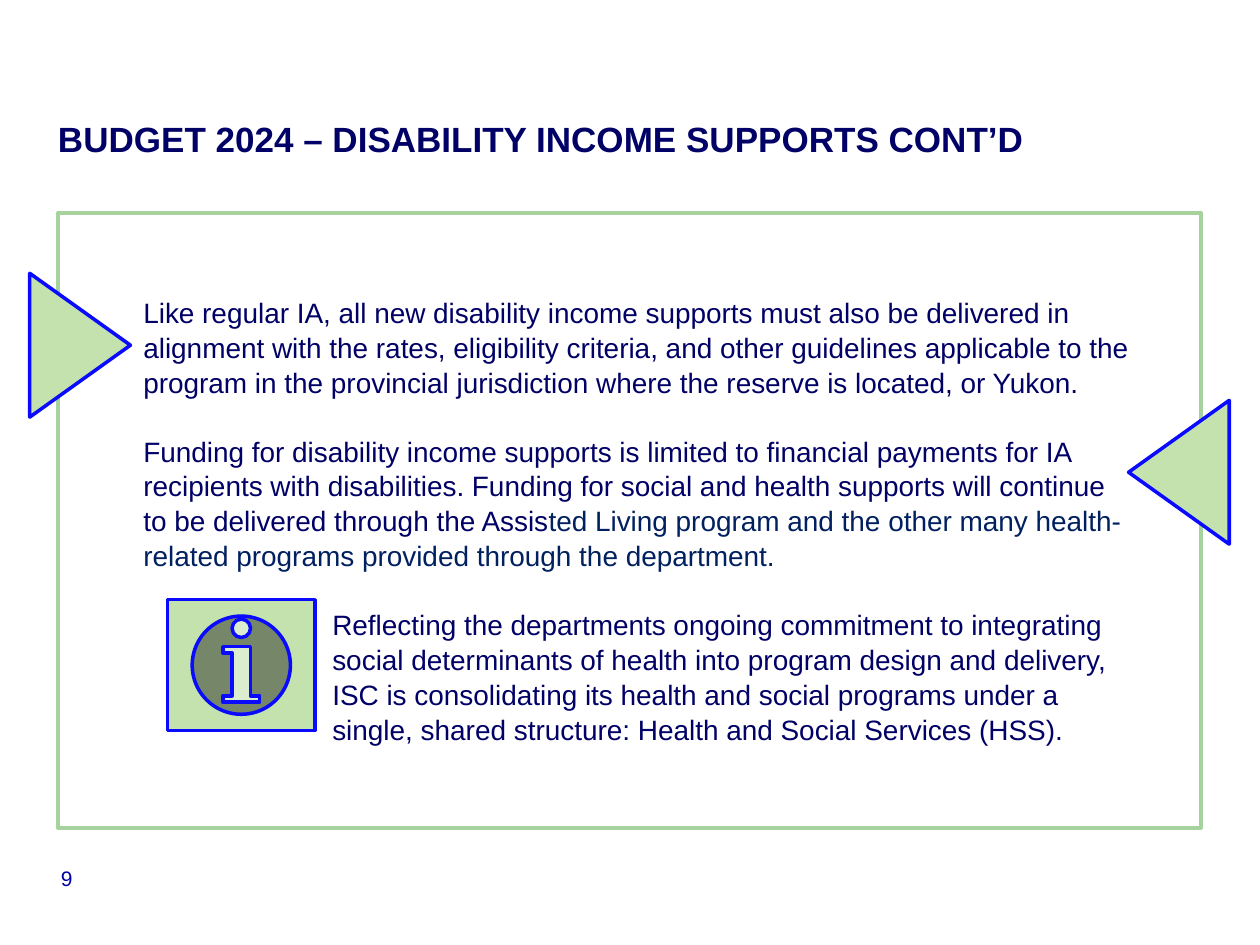
from dataclasses import dataclass

from lxml import etree
from pptx import Presentation
from pptx.dml.color import RGBColor
from pptx.enum.shapes import MSO_SHAPE
from pptx.enum.text import MSO_ANCHOR, PP_ALIGN
from pptx.oxml.ns import qn
from pptx.util import Cm, Pt

RECTANGLE = MSO_SHAPE.RECTANGLE
PENTAGON = MSO_SHAPE.PENTAGON
INFORMATION = MSO_SHAPE.ACTION_BUTTON_INFORMATION
TOP = MSO_ANCHOR.TOP
LEFT, CENTER = PP_ALIGN.LEFT, PP_ALIGN.CENTER


@dataclass(frozen=True)
class Theme:
    font: str = "Arial"
    navy: str = "000066"
    dark_blue: str = "002060"
    number_blue: str = "0000A3"
    outline_blue: str = "0A0AFF"
    pale_green: str = "C4E2AE"
    frame_green: str = "A6D39D"
    title_size: int = 20
    body_size: int = 16
    number_size: int = 12
    line_width: int = 2


THEME = Theme()

RULES_TEXT = (
    "Like regular IA, all new disability income supports must also be delivered in "
    "alignment with the rates, eligibility criteria, and other guidelines applicable "
    "to the program in the provincial jurisdiction where the reserve is located, or Yukon."
)
FUNDING_TEXT = (
    "Funding for disability income supports is limited to financial payments for IA "
    "recipients with disabilities. Funding for social and health supports will "
    "continue to be delivered through the Assis"
)
PROGRAMS_TEXT = (
    "ted Living program and the other many health-related programs provided through "
    "the department."
)
COMMITMENT_TEXT = (
    "Reflecting the departments ongoing commitment to integrating social determinants "
    "of health into program design and delivery, ISC is consolidating its health and "
    "social programs under a single, shared structure: Health and Social Services (HSS)."
)


def add_run(paragraph, text, size, color, bold=False):
    run = paragraph.add_run()
    run.text = text
    formats = {"name": THEME.font, "size": Pt(size), "bold": bold}
    for attribute, value in formats.items():
        setattr(run.font, attribute, value)
    run.font.color.rgb = RGBColor.from_string(color)


def add_text_frame(slide, box, margins=None):
    """Return a wrapping text frame in box, a (left, top, width, height) in cm."""
    frame = slide.shapes.add_textbox(*map(Cm, box)).text_frame
    formats = {"word_wrap": True, "vertical_anchor": TOP, **(margins or {})}
    for attribute, value in formats.items():
        setattr(frame, attribute, value)
    return frame


def add_outlined_shape(slide, kind, box, line_color, fill_color=None):
    shape = slide.shapes.add_shape(kind, *map(Cm, box))
    shape.shadow.inherit = False
    if fill_color:
        shape.fill.solid()
        shape.fill.fore_color.rgb = RGBColor.from_string(fill_color)
    else:
        shape.fill.background()
    shape.line.color.rgb = RGBColor.from_string(line_color)
    shape.line.width = Pt(THEME.line_width)
    etree.SubElement(shape.line._get_or_add_ln(), qn("a:round"))
    return shape


def add_title(slide, box):
    sides = ("left", "top", "right", "bottom")
    frame = add_text_frame(slide, box, {f"margin_{side}": 0 for side in sides})
    title = frame.paragraphs[0]
    title.line_spacing = Pt(24)
    add_run(title, "BUDGET 2024 – DISABILITY INCOME SUPPORTS CONT’D",
            THEME.title_size, THEME.navy, bold=True)


def add_pointers(slide, box):
    """Place a triangle on each side of the box, both pointing inwards."""
    left, top, width, _ = box
    pointer_width, pointer_height, overhang = 2.03, 2.9, 0.57
    places = [
        (left - overhang, top + 1.22, 0),
        (left + width + overhang - pointer_width, top + 3.78, 180),
    ]
    for x, y, rotation in places:
        pointer = add_outlined_shape(
            slide, PENTAGON, (x, y, pointer_width, pointer_height),
            THEME.outline_blue, THEME.pale_green)
        pointer.adjustments[0] = 1
        pointer.rotation = rotation


def add_body(slide, box):
    left, top, width, _ = box
    frame = add_text_frame(slide, (left + 1.47, top + 1.52, width - 2.54, 9.83))
    paragraphs = [
        ([(RULES_TEXT, THEME.navy)], 0),
        ([(FUNDING_TEXT, THEME.navy), (PROGRAMS_TEXT, THEME.dark_blue)], 0),
        ([(COMMITMENT_TEXT, THEME.navy)], 3.81),
    ]
    for index, (runs, indent) in enumerate(paragraphs):
        paragraph = frame.add_paragraph() if index else frame.paragraphs[0]
        paragraph.alignment = LEFT
        paragraph.line_spacing = 1.04
        if index:
            paragraph.space_before = Pt(19.2)
        if indent:
            properties = paragraph._p.get_or_add_pPr()
            properties.set("marL", str(Cm(indent)))
            properties.set("indent", "0")
        for text, color in runs:
            add_run(paragraph, text, THEME.body_size, color)


def add_content(slide, box):
    left, top, _, _ = box
    add_outlined_shape(slide, RECTANGLE, box, THEME.frame_green)
    add_pointers(slide, box)
    add_body(slide, box)
    add_outlined_shape(slide, INFORMATION, (left + 2.21, top + 7.8, 2.97, 2.64),
                       THEME.outline_blue, THEME.pale_green)


def add_slide_number(slide, box):
    number = add_text_frame(slide, box).paragraphs[0]
    number.alignment = CENTER
    add_run(number, "9", THEME.number_size, THEME.number_blue)


def main():
    presentation = Presentation()
    presentation.slide_width, presentation.slide_height = Cm(25.4), Cm(19.05)
    slide = presentation.slides.add_slide(presentation.slide_layouts[6])
    margin, content_width = 1.17, 23.04
    add_slide_number(slide, (0.1, 17.32, 2.49, 0.76))
    add_title(slide, (margin, 2.36, content_width, 1.63))
    add_content(slide, (margin, 4.29, content_width, 12.4))
    presentation.save("out.pptx")


if __name__ == "__main__":
    main()
